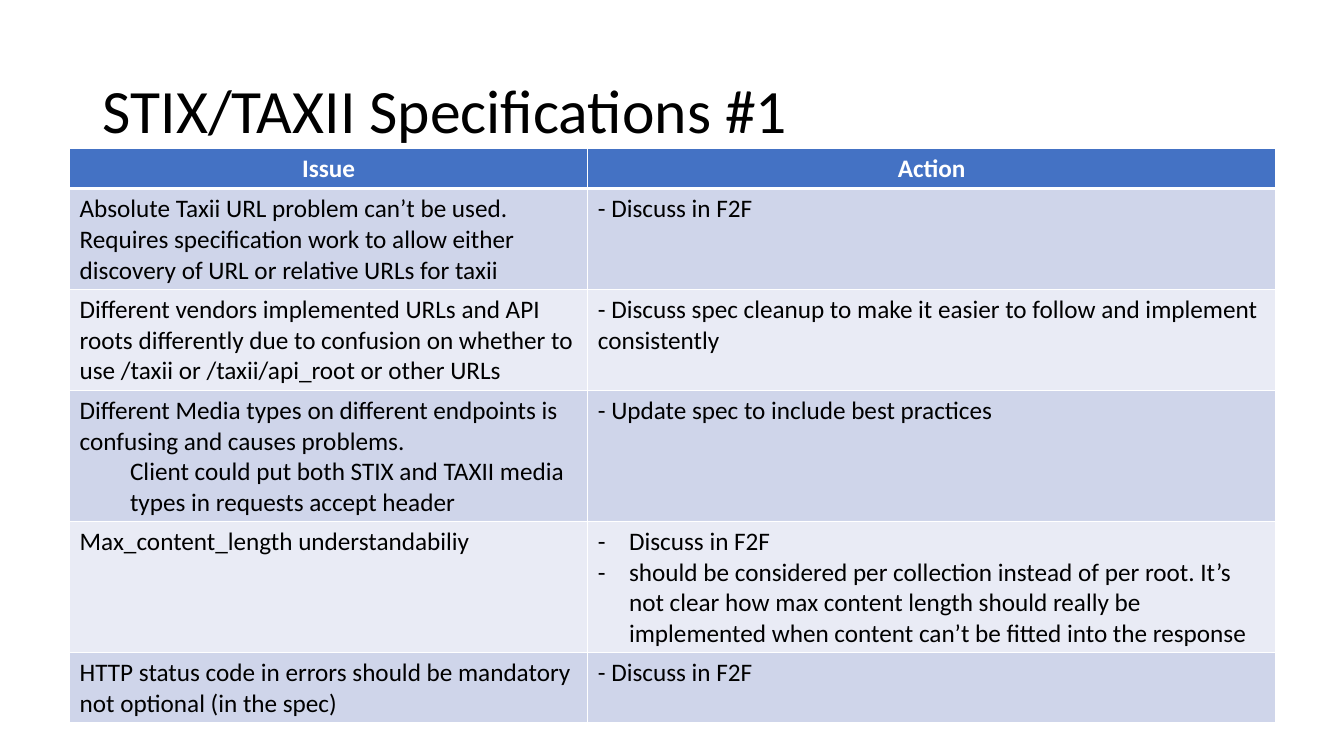
import pptx
import pptx.dml.color
import pptx.enum.text
import pptx.oxml
import pptx.oxml.ns
import pptx.util
from lxml import etree

Inches = pptx.util.Inches
Pt = pptx.util.Pt
qn = pptx.oxml.ns.qn

FONT = "Calibri"
COLORS = {
    "text": "000000",
    "white": "FFFFFF",
    "header": "4472C4",
    "odd": "CFD5EA",
    "even": "E9EBF5",
}
COLUMN_WIDTHS = (5.14, 6.82)
HEADERS = ("Issue", "Action")
ISSUES = [
    (3,
     [("plain", "Absolute Taxii URL problem can’t be used. Requires specification work "
                "to allow either discovery of URL or relative URLs for taxii")],
     [("plain", "- Discuss in F2F")]),
    (3,
     [("plain", "Different vendors implemented URLs and API roots differently due to "
                "confusion on whether to use /taxii or /taxii/api_root or other URLs")],
     [("plain", "- Discuss spec cleanup to make it easier to follow and implement consistently")]),
    (4,
     [("plain", "Different Media types on different endpoints is confusing and causes problems."),
      ("indent", "Client could put both STIX and TAXII media types in requests accept header")],
     [("plain", "- Update spec to include best practices")]),
    (4,
     [("plain", "Max_content_length understandabiliy")],
     [("dash", "Discuss in F2F"),
      ("dash", "should be considered per collection instead of per root. It’s not clear "
               "how max content length should really be implemented when content can’t be "
               "fitted into the response")]),
    (2,
     [("plain", "HTTP status code in errors should be mandatory not optional (in the spec)")],
     [("plain", "- Discuss in F2F")]),
]


def rgb(name):
    return pptx.dml.color.RGBColor.from_string(COLORS[name])


def add_run(p, text, size, color, bold=False):
    r = p.add_run()
    r.text = text
    r.font.name = FONT
    r.font.size = Pt(size)
    r.font.bold = bold
    r.font.color.rgb = rgb(color)


def indent_paragraph(p, style):
    pPr = p._p.get_or_add_pPr()
    if style == "indent":
        p.level = 1
        pPr.set("marL", str(Inches(0.5)))
        pPr.set("indent", "0")
    elif style == "dash":
        pPr.set("marL", str(Inches(0.31)))
        pPr.set("indent", str(-Inches(0.31)))
        etree.SubElement(pPr, qn("a:buFont"), typeface=FONT)
        etree.SubElement(pPr, qn("a:buChar"), char="-")


def set_borders(cell, top, bottom):
    tcPr = cell._tc.get_or_add_tcPr()
    for side, width in (("L", 1), ("R", 1), ("T", top), ("B", bottom)):
        ln = etree.SubElement(tcPr, qn("a:ln" + side), w=str(Pt(width)))
        fill = etree.SubElement(ln, qn("a:solidFill"))
        etree.SubElement(fill, qn("a:srgbClr"), val=COLORS["white"])


def fill_cell(cell, paragraphs, row):
    header = row == 0
    set_borders(cell, 3 if row == 1 else 1, 3 if header else 1)
    cell.fill.solid()
    cell.fill.fore_color.rgb = rgb("header" if header else "odd" if row % 2 else "even")
    tf = cell.text_frame
    for i, (style, text) in enumerate(paragraphs):
        p = tf.add_paragraph() if i else tf.paragraphs[0]
        indent_paragraph(p, style)
        if header:
            p.alignment = pptx.enum.text.PP_ALIGN.CENTER
        add_run(p, text, 18, "white" if header else "text", header)


def add_title(slide, left, top, width, height):
    sp = slide.shapes.add_textbox(Inches(left), Inches(top), Inches(width), Inches(height))
    tf = sp.text_frame
    tf.word_wrap = True
    tf.vertical_anchor = pptx.enum.text.MSO_ANCHOR.MIDDLE
    p = tf.paragraphs[0]
    p.line_spacing = 0.9
    add_run(p, "STIX/TAXII Specifications #1", 44, "text")


def add_issue_table(slide, left, top, width, height):
    rows = [(1, *([("plain", name)] for name in HEADERS)), *ISSUES]
    table = slide.shapes.add_table(
        len(rows), len(HEADERS), Inches(left), Inches(top), Inches(width), Inches(height)
    ).table
    for column, share in zip(table.columns, COLUMN_WIDTHS):
        column.width = Inches(width * share / sum(COLUMN_WIDTHS))
    for i, (lines, *cells) in enumerate(rows):
        table.rows[i].height = Inches(0.1 + 0.3 * lines)
        for j, paragraphs in enumerate(cells):
            fill_cell(table.cell(i, j), paragraphs, i)


def main():
    prs = pptx.Presentation()
    prs.slide_width = Inches(13.33)
    prs.slide_height = Inches(7.5)
    slide = prs.slides.add_slide(prs.slide_layouts[6])
    add_title(slide, 0.92, 0.4, 11.5, 1.45)
    add_issue_table(slide, 0.69, 1.47, 11.96, 5.7)
    prs.save("out.pptx")


if __name__ == "__main__":
    main()
